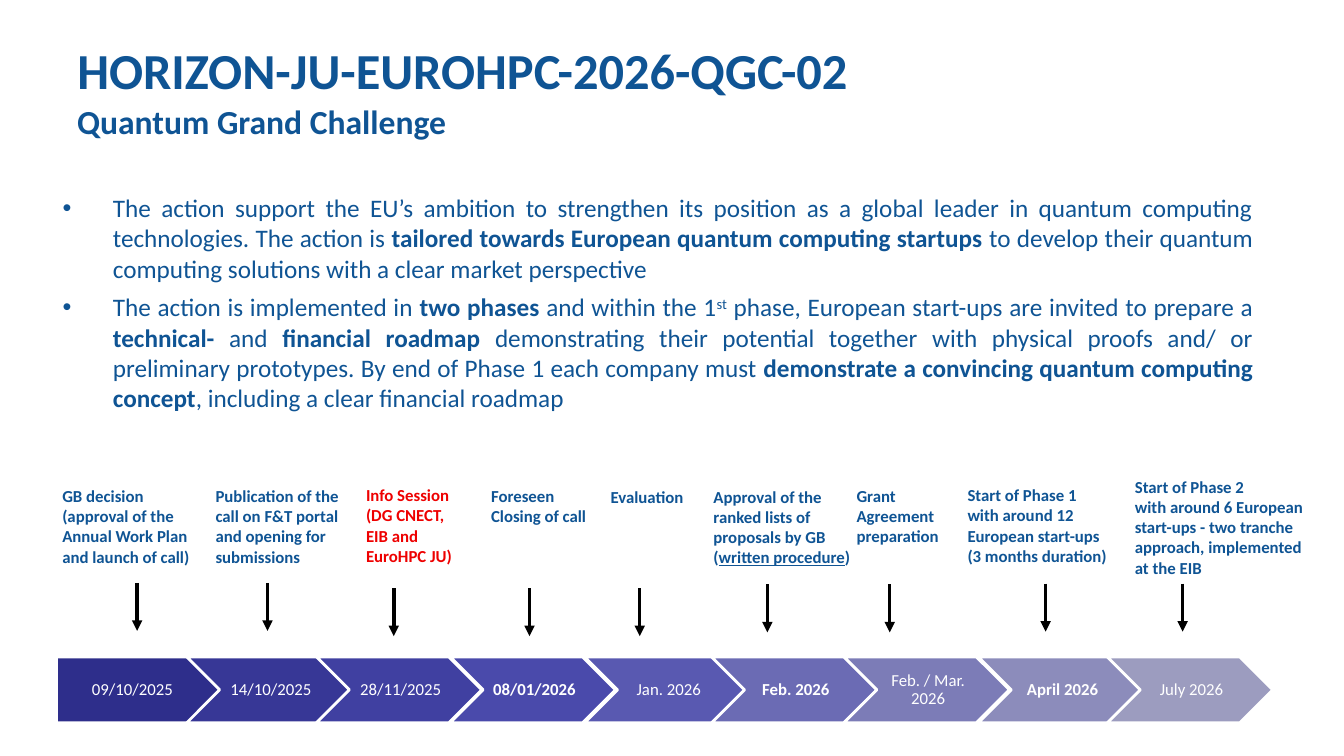
from dataclasses import dataclass
from typing import NamedTuple

from lxml import etree
from pptx import Presentation
from pptx.dml.color import RGBColor
from pptx.enum.shapes import MSO_CONNECTOR, MSO_SHAPE
from pptx.enum.text import MSO_ANCHOR, MSO_AUTO_SIZE, PP_ALIGN
from pptx.oxml.ns import qn
from pptx.util import Inches, Pt

LEFT, CENTER, JUSTIFY = PP_ALIGN.LEFT, PP_ALIGN.CENTER, PP_ALIGN.JUSTIFY
TOP, MIDDLE = MSO_ANCHOR.TOP, MSO_ANCHOR.MIDDLE
PENTAGON, CHEVRON = MSO_SHAPE.PENTAGON, MSO_SHAPE.CHEVRON
STRAIGHT = MSO_CONNECTOR.STRAIGHT
FIXED_SIZE = MSO_AUTO_SIZE.NONE

PAGE_WIDTH, PAGE_HEIGHT = Inches(13.333), Inches(7.5)


@dataclass(frozen=True)
class Theme:
    """Colours, font and type sizes of the slide."""

    font: str = "Calibri"
    ink: str = "0F5494"
    alert: str = "EE0000"
    white: str = "FFFFFF"
    arrow: str = "000000"
    steps: tuple = ("2E2E8B", "373796", "4040A1", "4A4AAB", "5959B1",
                    "6B6BB4", "7C7CB7", "8C8CBB", "9C9CBF")
    title: int = 36
    subtitle: int = 24
    body: int = 18
    label: int = 12


THEME = Theme()


class Milestone(NamedTuple):
    """A timeline step; positions are percentages of the slide's size."""

    date: str
    bold: bool
    step_x: float
    label: str
    label_x: float
    label_y: float
    label_width: float
    arrow_x: float
    arrow_y: float


MILESTONES = (
    Milestone("09/10/2025", False, 4.2,
              "GB decision\n(approval of the Annual Work Plan and launch of call)",
              3.9, 63.6, 11.8, 10.2, 77.1),
    Milestone("14/10/2025", False, 13.9,
              "Publication of the call on F&T portal and opening for submissions",
              15.3, 63.6, 11.2, 19.9, 77.1),
    Milestone("28/11/2025", False, 23.55,
              "Info Session (DG CNECT, EIB and EuroHPC JU)",
              26.5, 63.5, 8.8, 29.3, 77.8),
    Milestone("08/01/2026", True, 33.5, "Foreseen\nClosing of call",
              35.8, 63.6, 13.1, 39.4, 77.8),
    Milestone("Jan. 2026", False, 43.5, "Evaluation",
              44.7, 63.7, 11.7, 47.6, 77.8),
    Milestone("Feb. 2026", True, 52.95,
              "Approval of the ranked lists of proposals by GB\n(written procedure)",
              52.35, 63.7, 11.9, 57.1, 77.3),
    Milestone("Feb. / Mar. 2026", False, 62.8, "Grant Agreement preparation",
              63, 63.6, 10.4, 66.2, 77.3),
    Milestone("April 2026", True, 72.8,
              "Start of Phase 1\nwith around 12 European start-ups (3 months duration)",
              71.25, 63.5, 12.5, 77.8, 77.2),
    Milestone("July 2026", False, 82.4,
              "Start of Phase 2\nwith around 6 European start-ups - two tranche "
              "approach, implemented at the EIB",
              83.7, 62.4, 14.1, 88, 77.2),
)
ALERT_DATE = "28/11/2025"
UNDERLINED = "written procedure"

BULLETS = (
    (("The action support the EU’s ambition to strengthen its position as a global "
      "leader in quantum computing technologies. The action is ", ""),
     ("tailored towards European quantum computing startups ", "bold"),
     ("to develop their quantum computing solutions with a clear market perspective", "")),
    (("The action is implemented in ", ""),
     ("two phases ", "bold"),
     ("and within the 1", ""),
     ("st", "super"),
     (" phase, European start-ups are invited to prepare a ", ""),
     ("technical-", "bold"),
     (" and ", ""),
     ("financial roadmap ", "bold"),
     ("demonstrating their potential together with physical proofs and/ or preliminary "
      "prototypes. By end of Phase 1 each company must ", ""),
     ("demonstrate a convincing quantum computing concept", "bold"),
     (", including a clear financial roadmap", "")),
)


def across(percent):
    """Turn a percentage of the slide's width into a length."""
    return int(PAGE_WIDTH * percent / 100)


def down(percent):
    """Turn a percentage of the slide's height into a length."""
    return int(PAGE_HEIGHT * percent / 100)


def area(left, top, width, height):
    """Turn four percentages into a position and a size."""
    return across(left), down(top), across(width), down(height)


def style(span, size, color, bold=False):
    """Format one run in the theme's font."""
    span.font.name = THEME.font
    span.font.size = Pt(size)
    span.font.bold = bold
    span.font.color.rgb = RGBColor.from_string(color)


def fill_text(box, text, size, color, bold, anchor, align):
    """Write uniformly formatted text into a shape."""
    frame = box.text_frame
    frame.text = text
    frame.word_wrap = True
    frame.auto_size = FIXED_SIZE
    frame.vertical_anchor = anchor
    for para in frame.paragraphs:
        para.alignment = align
        for span in para.runs:
            style(span, size, color, bold)


def add_label(page, place, text, size, color, anchor=TOP):
    """Add a bold, left-aligned text box and return it."""
    box = page.shapes.add_textbox(*place)
    fill_text(box, text, size, color, True, anchor, LEFT)
    return box


def underline(para, phrase):
    """Underline a phrase inside a one-run paragraph."""
    before, after = para.text.split(phrase)
    first = para.runs[0]
    first.text = before
    for text in (phrase, after):
        span = para.add_run()
        span.text = text
        style(span, THEME.label, THEME.ink, True)
        span.font.underline = text == phrase


def add_bullet(para):
    """Give a paragraph a coloured bullet and a hanging indent."""
    properties = para._p.get_or_add_pPr()
    properties.set("marL", str(Inches(0.5)))
    properties.set("indent", str(-Inches(0.5)))
    color = etree.SubElement(properties, qn("a:buClr"))
    etree.SubElement(color, qn("a:srgbClr"), val=THEME.ink)
    etree.SubElement(properties, qn("a:buFont"), typeface="Arial")
    etree.SubElement(properties, qn("a:buChar"), char="•")


def fill_bullets(body):
    """Write the bulleted list into the body placeholder."""
    frame = body.text_frame
    frame.word_wrap = True
    frame.auto_size = FIXED_SIZE
    frame.vertical_anchor = TOP
    for index, pieces in enumerate(BULLETS):
        para = frame.add_paragraph() if index else frame.paragraphs[0]
        add_bullet(para)
        para.alignment = JUSTIFY
        para.space_before = Pt(6 if index else 0)
        for text, kind in pieces:
            span = para.add_run()
            span.text = text
            style(span, THEME.body, THEME.ink, kind == "bold")
            if kind == "super":
                span._r.get_or_add_rPr().set("baseline", "30000")


def add_step(page, milestone, preset, color):
    """Add one dated arrow block of the timeline."""
    step = page.shapes.add_shape(preset, *area(milestone.step_x, 86.9, 12.3, 8.7))
    step.shadow.inherit = False
    step.fill.solid()
    step.fill.fore_color.rgb = RGBColor.from_string(color)
    step.line.color.rgb = RGBColor.from_string(THEME.white)
    step.line.width = Pt(2)
    fill_text(step, milestone.date, THEME.label, THEME.white, milestone.bold, MIDDLE, CENTER)
    step.text_frame.margin_left = Inches(0.05)
    step.text_frame.margin_right = Inches(0.02)
    step.text_frame.paragraphs[0].line_spacing = 0.9


def add_arrow(page, milestone):
    """Add the arrow that points from a label to its step."""
    x, y = across(milestone.arrow_x), down(milestone.arrow_y)
    arrow = page.shapes.add_connector(STRAIGHT, x, y, x, y + down(6.35))
    arrow.line.color.rgb = RGBColor.from_string(THEME.arrow)
    arrow.line.width = Pt(2.5)
    etree.SubElement(arrow.line._get_or_add_ln(), qn("a:tailEnd"), type="triangle")
    etree.SubElement(arrow._element.spPr, qn("a:effectLst"))


def add_milestone_label(page, milestone):
    """Add the description above a step."""
    color = THEME.alert if milestone.date == ALERT_DATE else THEME.ink
    place = area(milestone.label_x, milestone.label_y, milestone.label_width, 12.1)
    box = add_label(page, place, milestone.label, THEME.label, color)
    for para in box.text_frame.paragraphs:
        if UNDERLINED in para.text:
            underline(para, UNDERLINED)


def main():
    """Build the slide and save it."""
    deck = Presentation()
    deck.slide_width, deck.slide_height = PAGE_WIDTH, PAGE_HEIGHT
    page = deck.slides.add_slide(deck.slide_layouts[1])
    title, body = page.placeholders
    title.left, title.top, title.width, title.height = area(5, 2.4, 94, 13.6)
    fill_text(title, "HORIZON-JU-EUROHPC-2026-QGC-02", THEME.title, THEME.ink,
              True, MIDDLE, LEFT)
    add_label(page, area(5, 12.4, 90, 7.3), "Quantum Grand Challenge",
              THEME.subtitle, THEME.ink, MIDDLE)
    body.left, body.top, body.width, body.height = area(3.9, 24.8, 90.1, 32.8)
    fill_bullets(body)
    for index, milestone in enumerate(MILESTONES):
        add_step(page, milestone, CHEVRON if index else PENTAGON, THEME.steps[index])
        add_milestone_label(page, milestone)
        add_arrow(page, milestone)
    deck.save("out.pptx")


if __name__ == "__main__":
    main()
